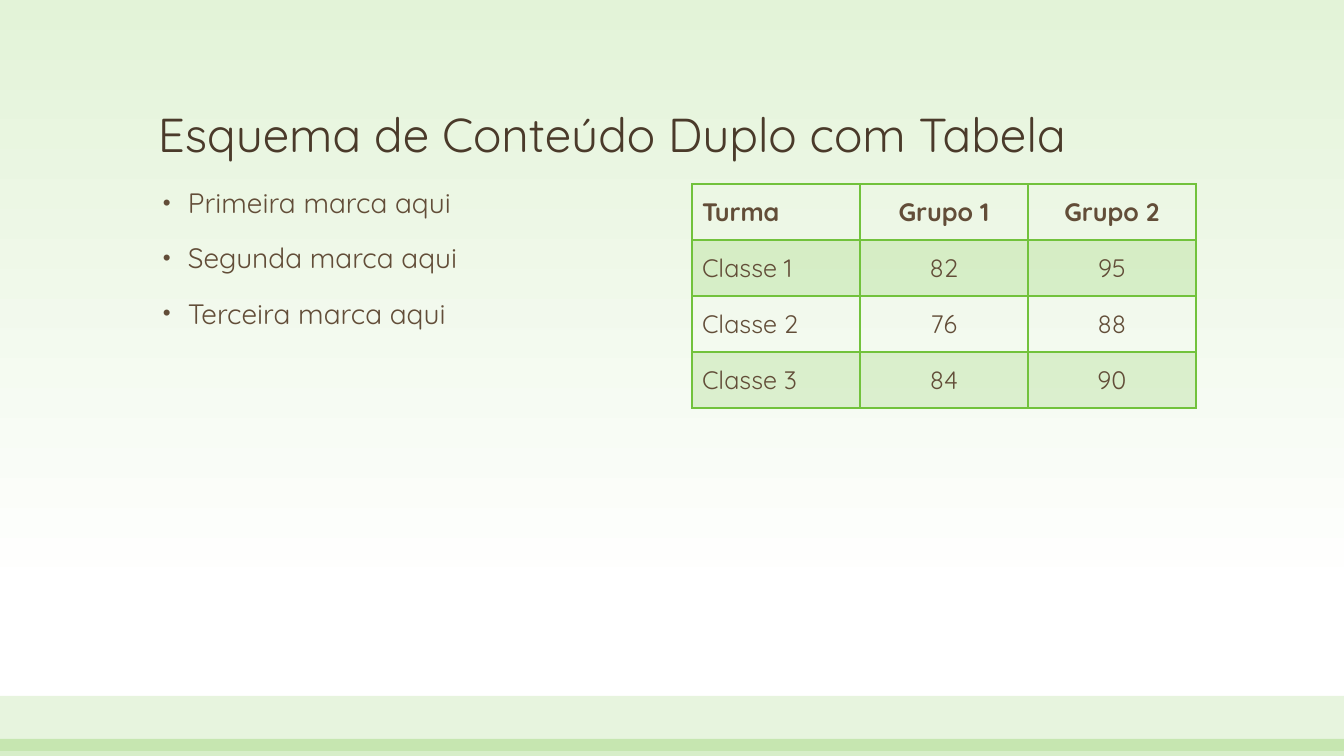
import pptx
import pptx.util
import pptx.dml.color
import pptx.enum.text
import pptx.enum.shapes
import pptx.oxml.ns
from lxml import etree

RGB = pptx.dml.color.RGBColor
Pt = pptx.util.Pt
ALIGN = pptx.enum.text.PP_ALIGN
ANCHOR = pptx.enum.text.MSO_ANCHOR
qn = pptx.oxml.ns.qn

GREEN = RGB(0x72, 0xC2, 0x3C)
PALE = RGB(0xE3, 0xF3, 0xD8)
WHITE = RGB(0xFF, 0xFF, 0xFF)
DARK = RGB(0x4A, 0x3A, 0x2A)
BROWN = RGB(0x62, 0x4D, 0x38)
FONT = "Quicksand"
WIDE, HIGH = 1344, 756

TITLE = "Esquema de Conteúdo Duplo com Tabela"
MARKS = ["Primeira marca aqui", "Segunda marca aqui", "Terceira marca aqui"]
ROWS = [
    ["Turma", "Grupo 1", "Grupo 2"],
    ["Classe 1", "82", "95"],
    ["Classe 2", "76", "88"],
    ["Classe 3", "84", "90"],
]


def px(n):
    return pptx.util.Emu(round(n * 914400 / 100.8))


def tint(fill, alpha):
    """Fill with green at the given opacity in percent."""
    fill.solid()
    fill.fore_color.rgb = GREEN
    color = fill._xPr.find(qn("a:solidFill"))[0]
    etree.SubElement(color, qn("a:alpha"), val=str(alpha * 1000))


def write(para, text, size, color, bold=False):
    run = para.add_run()
    run.text = text
    run.font.name = FONT
    run.font.size = Pt(size)
    run.font.bold = bold
    run.font.color.rgb = color


def add_text(slide, box, anchor):
    frame = slide.shapes.add_textbox(*map(px, box)).text_frame
    frame.word_wrap = True
    frame.vertical_anchor = anchor
    return frame


# Background gradient and the two bars at the foot
def add_back(slide, box):
    fill = slide.background.fill
    fill.gradient()
    fill.gradient_angle = 270
    for stop, spot, color in zip(fill.gradient_stops, (0, 0.79), (PALE, WHITE)):
        stop.position = spot
        stop.color.rgb = color
    left, top, width, height = box
    for drop, tall, alpha in ((0, 55, 17), (43, height - 43, 28)):
        bar = slide.shapes.add_shape(
            pptx.enum.shapes.MSO_SHAPE.RECTANGLE,
            *map(px, (left, top + drop, width, tall)))
        bar.shadow.inherit = False
        bar.line.fill.background()
        tint(bar.fill, alpha)


def add_title(slide, box):
    para = add_text(slide, box, ANCHOR.BOTTOM).paragraphs[0]
    para.line_spacing = 0.9
    write(para, TITLE, 34, DARK)


# Bulleted list
def add_list(slide, box):
    frame = add_text(slide, box, ANCHOR.TOP)
    for i, mark in enumerate(MARKS):
        para = frame.add_paragraph() if i else frame.paragraphs[0]
        para.line_spacing = 0.9
        para.space_before = Pt(18)
        props = para._p.get_or_add_pPr()
        props.set("marL", str(px(30)))
        props.set("indent", str(-px(25)))
        etree.SubElement(props, qn("a:buSzPct"), val="80000")
        etree.SubElement(props, qn("a:buFont"), typeface="Arial")
        etree.SubElement(props, qn("a:buChar"), char="•")
        write(para, mark, 20, BROWN)


def add_edges(cell, row):
    """Outline a cell; the rule below the header is thicker."""
    props = cell._tc.get_or_add_tcPr()
    widths = {"L": 1, "R": 1, "T": 2 if row == 1 else 1, "B": 2 if row == 0 else 1}
    for i, (side, width) in enumerate(widths.items()):
        line = etree.Element(qn("a:ln" + side), w=str(Pt(width)))
        solid = etree.SubElement(line, qn("a:solidFill"))
        etree.SubElement(solid, qn("a:srgbClr"), val=str(GREEN))
        props.insert(i, line)


# Table of groups, with every other row tinted
def add_grid(slide, box):
    table = slide.shapes.add_table(len(ROWS), len(ROWS[0]), *map(px, box)).table
    table.first_row = table.horz_banding = False
    for r, row in enumerate(ROWS):
        for c, text in enumerate(row):
            cell = table.cell(r, c)
            cell.vertical_anchor = ANCHOR.MIDDLE
            if r % 2:
                tint(cell.fill, 20)
            else:
                cell.fill.background()
            add_edges(cell, r)
            para = cell.text_frame.paragraphs[0]
            para.alignment = ALIGN.CENTER if c else ALIGN.LEFT
            write(para, text, 18, BROWN, bold=r == 0)


def main():
    deck = pptx.Presentation()
    deck.slide_width, deck.slide_height = px(WIDE), px(HIGH)
    slide = deck.slides.add_slide(deck.slide_layouts[6])
    add_back(slide, (0, 696, WIDE, HIGH - 696))
    add_title(slide, (148, 48, 1048, 120))
    add_grid(slide, (692, 184, 504, 224))
    add_list(slide, (148, 184, 504, 479))
    deck.save("out.pptx")


if __name__ == "__main__":
    main()
